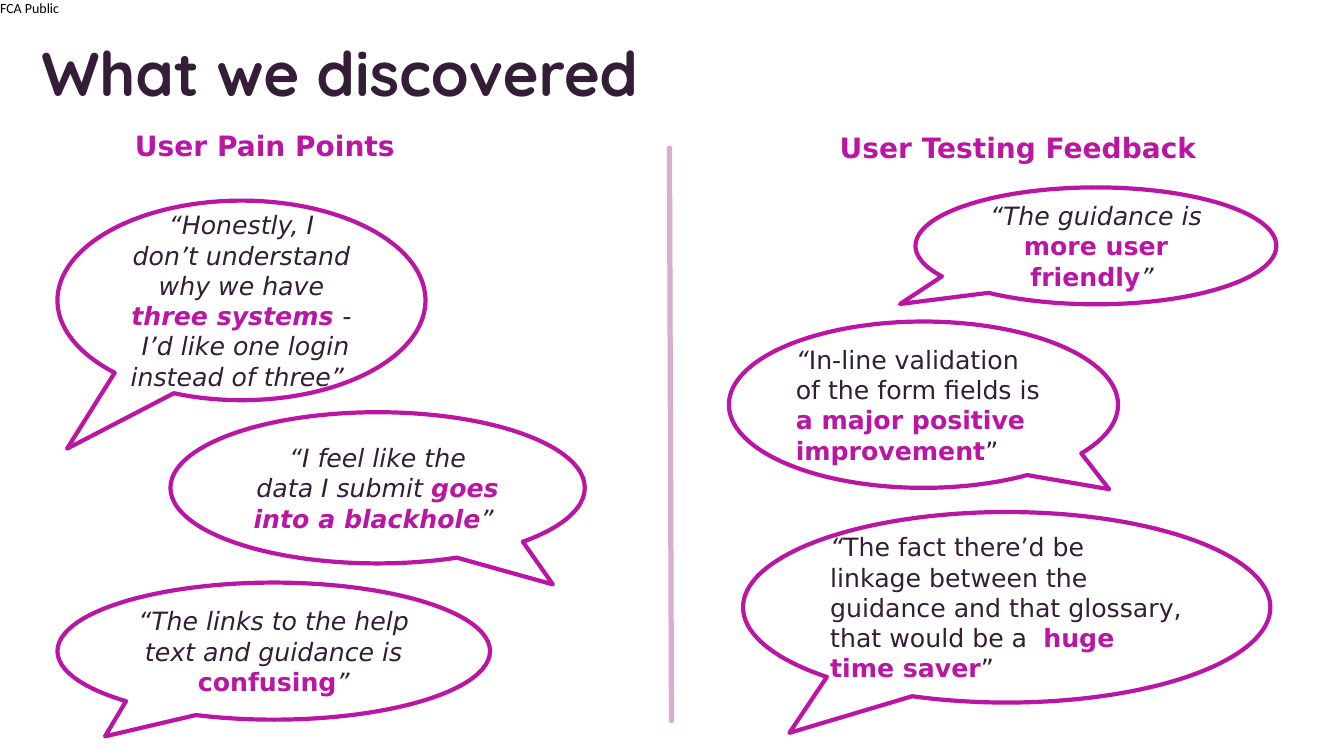
from dataclasses import dataclass

from lxml import etree
from pptx import Presentation
from pptx.dml.color import RGBColor
from pptx.enum.shapes import MSO_CONNECTOR, MSO_SHAPE
from pptx.enum.text import MSO_ANCHOR, MSO_AUTO_SIZE, PP_ALIGN
from pptx.oxml.ns import qn
from pptx.util import Inches, Pt

LEFT, CENTER = PP_ALIGN.LEFT, PP_ALIGN.CENTER
MIDDLE, TOP = MSO_ANCHOR.MIDDLE, MSO_ANCHOR.TOP
NO_FIT = MSO_AUTO_SIZE.NONE
CALLOUT = MSO_SHAPE.OVAL_CALLOUT
STRAIGHT = MSO_CONNECTOR.STRAIGHT

DARK, MAGENTA, PINK, WHITE, BLACK = "341D36", "BB16A3", "DAACCE", "FFFFFF", "000000"
BODY_FONT = "DejaVu Sans"
TIE, HARD_SPACE = "~", chr(160)


@dataclass(frozen=True)
class Span:
    text: str
    size: float = 18
    color: str = DARK
    bold: bool = False
    italic: bool = False
    font: str = BODY_FONT


@dataclass(frozen=True)
class Label:
    box: tuple[float, float, float, float]
    span: Span
    margin: float | None = None
    wrap: bool = True


@dataclass(frozen=True)
class Bubble:
    box: tuple[float, float, float, float]
    tail: tuple[float, float]
    spans: tuple[Span, ...]
    align: PP_ALIGN = CENTER


def plain(text: str) -> Span:
    return Span(text)


def slanted(text: str) -> Span:
    return Span(text, italic=True)


def strong(text: str, italic: bool = False) -> Span:
    return Span(text, color=MAGENTA, bold=True, italic=italic)


TITLE = Label(
    (0.31, 0.13, 11.68, 1.16),
    Span("What we discovered", 44, bold=True, font="Quicksand"),
)
LABELS = (
    Label((0, 0, 0.62, 0.17), Span("FCA Public", 10, BLACK, font="Calibri"), 0, False),
    Label((1.24, 1.23, 2.99, 0.44), Span("User Pain Points", 20, MAGENTA, True)),
    Label(
        (8.23, 1.25, 3.77, 0.44),
        Span("User Testing Feedback", 20, MAGENTA, True),
        wrap=False,
    ),
)
BUBBLES = (
    Bubble((1.69, 4.09, 4.11, 1.5), (0.423, 0.639), (
        slanted("“I feel like the data~I~submit "),
        strong("goes into~a~blackhole", True),
        slanted("”~"),
    )),
    Bubble((0.57, 1.99, 3.65, 1.98), (-0.474, 0.743), (
        slanted("“Honestly, I don’t~understand why we~have "),
        strong("three systems~", True),
        slanted("-~I’d like one login instead~of three”~"),
    )),
    Bubble((9.08, 1.86, 3.58, 1.16), (-0.543, 0.497), (
        slanted("“The guidance is "),
        strong("more user friendly"),
        slanted("”~"),
    )),
    Bubble((0.57, 5.78, 4.29, 1.36), (-0.39, 0.622), (
        slanted("“The links to the help text~and guidance is "),
        strong("confusing"),
        slanted("”"),
    )),
    Bubble((7.23, 3.19, 3.86, 1.65), (0.477, 0.508), (
        slanted("“"),
        plain("In-line validation of the form fields is "),
        strong("a major positive improvement"),
        plain("”"),
    ), LEFT),
    Bubble((7.37, 5.08, 5.23, 1.89), (-0.412, 0.659), (
        slanted("“"),
        plain("The fact there’d be linkage between the guidance and that glossary, "
              "that would be a  "),
        strong("huge time saver"),
        plain("”"),
    ), LEFT),
)


def set_color(color_format, color: str) -> None:
    color_format.rgb = RGBColor.from_string(color)


def set_values(target, values: dict) -> None:
    for name, value in values.items():
        setattr(target, name, value)


def write_text(shape, spans, align, anchor, wrap=True, margin=None) -> None:
    frame = shape.text_frame
    set_values(frame, {
        "word_wrap": wrap, "auto_size": NO_FIT, "vertical_anchor": anchor,
    })
    if margin is not None:
        sides = ("left", "top", "right", "bottom")
        set_values(frame, {f"margin_{side}": Inches(margin) for side in sides})
    paragraph = frame.paragraphs[0]
    paragraph.alignment = align
    for span in spans:
        run = paragraph.add_run()
        run.text = span.text.replace(TIE, HARD_SPACE)
        set_values(run.font, {
            "name": span.font, "size": Pt(span.size),
            "bold": span.bold, "italic": span.italic,
        })
        set_color(run.font.color, span.color)


def add_title(slide, title: Label) -> None:
    shape = slide.shapes.title
    lengths = map(Inches, title.box)
    set_values(shape, dict(zip(("left", "top", "width", "height"), lengths)))
    write_text(shape, (title.span,), LEFT, MIDDLE)


def add_label(slide, label: Label) -> None:
    shape = slide.shapes.add_textbox(*map(Inches, label.box))
    write_text(shape, (label.span,), LEFT, TOP, label.wrap, label.margin)


def add_bubble(slide, bubble: Bubble) -> None:
    shape = slide.shapes.add_shape(CALLOUT, *map(Inches, bubble.box))
    shape.shadow.inherit = False
    for index, value in enumerate(bubble.tail):
        shape.adjustments[index] = value
    shape.fill.solid()
    set_color(shape.fill.fore_color, WHITE)
    set_color(shape.line.color, MAGENTA)
    shape.line.width = Pt(3)
    write_text(shape, bubble.spans, bubble.align, MIDDLE)


def add_divider(slide) -> None:
    divider = slide.shapes.add_connector(
        STRAIGHT, *map(Inches, (6.64, 1.47, 6.66, 7.15))
    )
    set_color(divider.line.color, PINK)
    divider.line.width = Pt(3.75)
    properties = divider._element.spPr
    properties.find(qn("a:ln")).set("cap", "rnd")
    etree.SubElement(properties, qn("a:effectLst"))


def main() -> None:
    presentation = Presentation()
    set_values(presentation, {
        "slide_width": Inches(13.33), "slide_height": Inches(7.5),
    })
    slide = presentation.slides.add_slide(presentation.slide_layouts[5])
    add_title(slide, TITLE)
    for label in LABELS:
        add_label(slide, label)
    for bubble in BUBBLES:
        add_bubble(slide, bubble)
    add_divider(slide)
    presentation.save("out.pptx")


if __name__ == "__main__":
    main()
